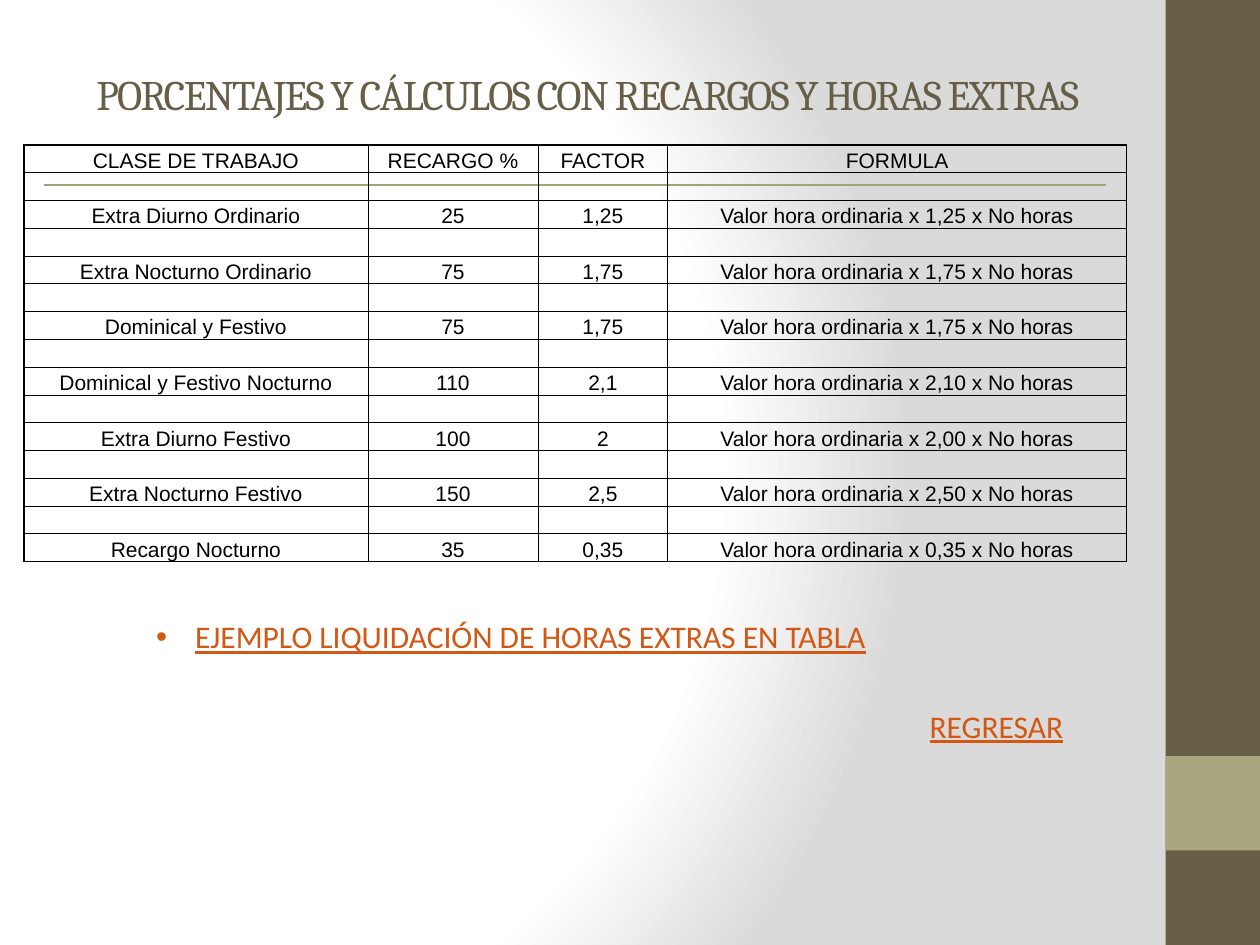
from lxml.etree import SubElement
from pptx import Presentation
from pptx.dml.color import RGBColor
from pptx.enum.shapes import MSO_CONNECTOR as Connector, MSO_SHAPE as Shape
from pptx.enum.text import MSO_ANCHOR as Anchor, PP_ALIGN as Align
from pptx.oxml import parse_xml
from pptx.oxml.ns import nsdecls, qn
from pptx.util import Inches, Pt

COLORS = {
    "white": "FFFFFF",
    "grey": "DADADA",
    "brown": "675E47",
    "olive": "A9A57C",
    "rule": "A6A278",
    "black": "000000",
    "link": "D25814",
}
TITLE_FORMAT = {"name": "Cambria", "size": Pt(24)}
CELL_FORMAT = {"name": "Arial", "size": Pt(12)}
LINK_FORMAT = {"name": "Calibri", "size": Pt(18), "underline": True}
CELL_LAYOUT = {
    "margin_left": Inches(0.01),
    "margin_right": Inches(0.01),
    "margin_top": Inches(0.01),
    "margin_bottom": 0,
    "vertical_anchor": Anchor.BOTTOM,
}
HEADINGS = ("CLASE DE TRABAJO", "RECARGO %", "FACTOR", "FORMULA")
SURCHARGES = [
    ("Extra Diurno Ordinario", "25", "1,25", "1,25"),
    ("Extra Nocturno Ordinario", "75", "1,75", "1,75"),
    ("Dominical y Festivo", "75", "1,75", "1,75"),
    ("Dominical y Festivo Nocturno", "110", "2,1", "2,10"),
    ("Extra Diurno Festivo", "100", "2", "2,00"),
    ("Extra Nocturno Festivo", "150", "2,5", "2,50"),
    ("Recargo Nocturno", "35", "0,35", "0,35"),
]
COLUMN_SHARES = (2.73, 1.35, 1.03, 3.64)


def rgb(color):
    return RGBColor.from_string(COLORS[color])


def apply(target, values):
    for attribute, value in values.items():
        setattr(target, attribute, value)


def write(paragraph, text, font_format, color):
    run = paragraph.add_run()
    run.text = text
    apply(run.font, font_format)
    run.font.color.rgb = rgb(color)
    return run


def paint_background(slide):
    stops = "".join(
        f'<a:gs pos="{percent * 1000}"><a:srgbClr val="{COLORS[color]}"/></a:gs>'
        for percent, color in ((0, "white"), (75, "white"), (100, "grey"))
    )
    background = parse_xml(
        f'<p:bg {nsdecls("p", "a")}><p:bgPr><a:gradFill rotWithShape="1">'
        f'<a:gsLst>{stops}</a:gsLst><a:path path="circle">'
        '<a:fillToRect l="20000" t="50000" r="100000" b="50000"/></a:path>'
        "</a:gradFill><a:effectLst/></p:bgPr></p:bg>"
    )
    slide._element.cSld.insert(0, background)


def add_sidebar(slide, left, top, width, height):
    accent_top = top + height - 2 * width
    for color, block_top, block_height in (
        ("brown", top, height),
        ("olive", accent_top, width),
    ):
        block = slide.shapes.add_shape(Shape.RECTANGLE, left, block_top, width, block_height)
        block.shadow.inherit = False
        block.fill.solid()
        block.fill.fore_color.rgb = rgb(color)
        block.line.fill.background()


def add_title(slide, left, top, width, height):
    frame = slide.shapes.add_textbox(left, top, width, height).text_frame
    apply(frame, {
        "word_wrap": True,
        "vertical_anchor": Anchor.MIDDLE,
        "margin_bottom": Inches(0.42),
    })
    heading = frame.paragraphs[0]
    heading.alignment = Align.CENTER
    run = write(heading, "PORCENTAJES Y CÁLCULOS CON RECARGOS Y HORAS EXTRAS", TITLE_FORMAT, "brown")
    run.font._element.set("spc", "-100")


def add_rule(slide, left, top, width):
    rule = slide.shapes.add_connector(Connector.STRAIGHT, left, top, left + width, top)
    rule.line.color.rgb = rgb("rule")
    rule.line.width = Pt(1)
    SubElement(rule._element.spPr, qn("a:effectLst"))


def set_borders(cell, widths):
    properties = cell._tc.get_or_add_tcPr()
    for position, (side, width) in enumerate(widths.items()):
        properties.insert(position, parse_xml(
            f'<a:ln{side} {nsdecls("a")} w="{Pt(width)}"><a:solidFill>'
            f'<a:srgbClr val="{COLORS["black"]}"/></a:solidFill></a:ln{side}>'
        ))


def add_surcharge_table(slide, left, top, width, height):
    rows = [HEADINGS]
    for kind, percent, factor, multiplier in SURCHARGES:
        formula = f"Valor hora ordinaria x {multiplier} x No horas"
        rows += [("",) * len(HEADINGS), (kind, percent, factor, formula)]
    last_row, last_column = len(rows) - 1, len(HEADINGS) - 1
    table = slide.shapes.add_table(len(rows), len(HEADINGS), left, top, width, height).table
    apply(table, {"first_row": False, "horz_banding": False})
    for column, share in zip(table.columns, COLUMN_SHARES):
        column.width = int(width * share / sum(COLUMN_SHARES))
    for r, texts in enumerate(rows):
        table.rows[r].height = int(height / len(rows))
        for c, text in enumerate(texts):
            cell = table.cell(r, c)
            apply(cell, CELL_LAYOUT)
            cell.fill.background()
            set_borders(cell, {
                "L": 1 if c == 0 else 0.5,
                "R": 1 if c == last_column else 0.5,
                "T": 1 if r in (0, 1) else 0.5,
                "B": 1 if r in (0, last_row) else 0.5,
            })
            paragraph = cell.text_frame.paragraphs[0]
            paragraph.alignment = Align.CENTER
            if text:
                write(paragraph, text, CELL_FORMAT, "black")
            else:
                SubElement(paragraph._p, qn("a:endParaRPr"), sz="1200")


def add_link(slide, text, left, top, width, height, bullet=False):
    frame = slide.shapes.add_textbox(left, top, width, height).text_frame
    frame.word_wrap = False
    paragraph = frame.paragraphs[0]
    write(paragraph, text, LINK_FORMAT, "link")
    if bullet:
        properties = paragraph._p.get_or_add_pPr()
        indent = Inches(0.31)
        properties.set("marL", str(indent))
        properties.set("indent", str(-indent))
        SubElement(properties, qn("a:buFont"), typeface="Arial")
        SubElement(properties, qn("a:buChar"), char="•")


def main():
    deck = Presentation()
    deck.slide_width, deck.slide_height = Inches(10), Inches(7.5)
    slide = deck.slides.add_slide(deck.slide_layouts[6])
    paint_background(slide)
    add_sidebar(slide, Inches(9.25), 0, Inches(0.75), deck.slide_height)
    add_title(slide, Inches(0.5), Inches(0.3), Inches(8.33), Inches(1.25))
    add_rule(slide, Inches(0.35), Inches(1.47), Inches(8.43))
    add_surcharge_table(slide, Inches(0.19), Inches(1.15), Inches(8.75), Inches(3.31))
    add_link(slide, "EJEMPLO LIQUIDACIÓN DE HORAS EXTRAS EN TABLA",
             Inches(1.14), Inches(4.85), Inches(5.87), Inches(0.71), bullet=True)
    add_link(slide, "REGRESAR", Inches(7.28), Inches(5.56), Inches(1.27), Inches(0.4))
    deck.save("out.pptx")


if __name__ == "__main__":
    main()
